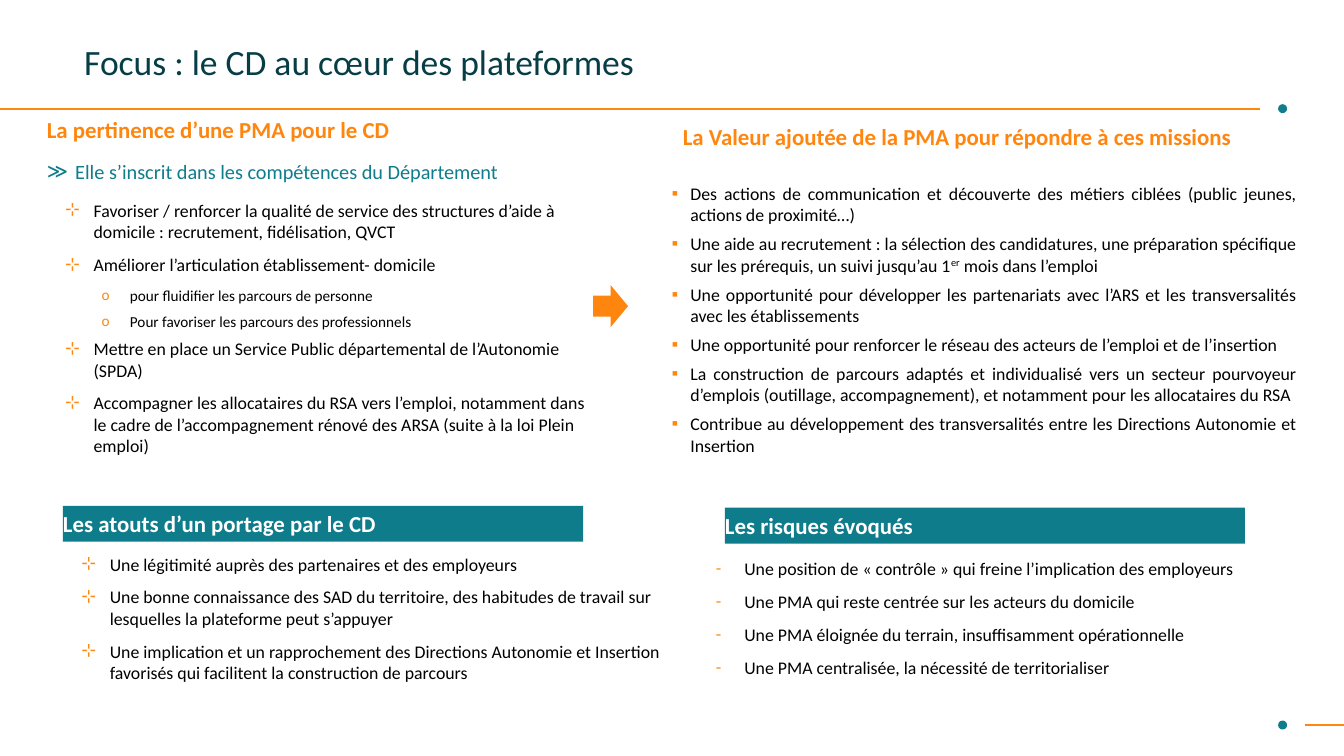
from lxml import etree
from pptx import Presentation
from pptx.dml.color import RGBColor
from pptx.enum import shapes, text
from pptx.oxml import ns
from pptx.util import Cm, Pt

THEME = {
    "font": "Calibri",
    "dark": "073E46", "teal": "0F7D8C", "band": "0E7C8B",
    "orange": "FF870F", "accent": "FF860E", "black": "000000", "white": "FFFFFF",
    "title": 28, "head": 18, "lead": 16, "item": 14, "sub": 12, "rule": 1.25,
}

SPACED = {"line_spacing": 1.14, "space_before": Pt(6), "space_after": Pt(12)}
ITEM = {"level": 1, "line_spacing": 1.0, "space_before": Pt(0), "space_after": Pt(9)}
SUB = {**ITEM, "level": 2, "space_after": Pt(6)}
TIGHT = {**SUB, "level": 0, "alignment": text.PP_ALIGN.JUSTIFY}
LEFT = {"alignment": text.PP_ALIGN.LEFT}

STYLES = {
    "title": {"size": "title", "color": "dark", "para": LEFT},
    "head": {"size": "head", "color": "accent", "bold": True, "para": {**SPACED, **LEFT}},
    "band": {"size": "head", "color": "white", "bold": True, "para": {**SPACED, **LEFT}},
    "lead": {"size": "lead", "color": "teal", "para": SPACED, "bullet": ("≫", "band", 0.79, -0.79)},
    "item": {"size": "item", "color": "black", "para": ITEM, "bullet": ("⊹", "orange", 1.3, -0.79)},
    "sub": {"size": "sub", "color": "black", "para": SUB, "bullet": ("o", "orange", 2.31, -0.79)},
    "value": {"size": "item", "color": "black", "para": TIGHT, "bullet": ("▪", "orange", 0.51, -0.61)},
    "risk": {"size": "item", "color": "black", "para": ITEM, "bullet": ("-", "orange", 1.3, -0.79)},
}

RELEVANCE = [
    ("lead", "Elle s’inscrit dans les compétences du Département"),
    ("item", "Favoriser / renforcer la qualité de service des structures d’aide à domicile : recrutement, fidélisation, QVCT"),
    ("item", "Améliorer l’articulation établissement- domicile"),
    ("sub", "pour fluidifier les parcours de personne"),
    ("sub", "Pour favoriser les parcours des professionnels"),
    ("item", "Mettre en place un Service Public départemental de l’Autonomie (SPDA)"),
    ("item", "Accompagner les allocataires du RSA vers l’emploi, notamment dans le cadre de l’accompagnement rénové des ARSA (suite à la loi Plein emploi)"),
]
VALUES = [("value", t) for t in (
    "Des actions de communication et découverte des métiers ciblées (public jeunes, actions de proximité…)",
    "Une aide au recrutement : la sélection des candidatures, une préparation spécifique sur les prérequis, un suivi jusqu’au 1^er^ mois dans l’emploi",
    "Une opportunité pour développer les partenariats avec l’ARS et les transversalités avec les établissements",
    "Une opportunité pour renforcer le réseau des acteurs de l’emploi et de l’insertion",
    "La construction de parcours adaptés et individualisé vers un secteur pourvoyeur d’emplois (outillage, accompagnement), et notamment pour les allocataires du RSA",
    "Contribue au développement des transversalités entre les Directions Autonomie et Insertion",
)]
ASSETS = [("item", t) for t in (
    "Une légitimité auprès des partenaires et des employeurs",
    "Une bonne connaissance des SAD du territoire, des habitudes de travail sur lesquelles la plateforme peut s’appuyer",
    "Une implication et un rapprochement des Directions Autonomie et Insertion favorisés qui facilitent la construction de parcours",
)]
RISKS = [("risk", t) for t in (
    "Une position de « contrôle » qui freine l’implication des employeurs",
    "Une PMA qui reste centrée sur les acteurs du domicile",
    "Une PMA éloignée du terrain, insuffisamment opérationnelle",
    "Une PMA centralisée, la nécessité de territorialiser",
)]

PLACEHOLDERS = [
    ((2.34, 0.51, 32.69, 1.8), [("title", "Focus : le CD au cœur des plateformes")]),
    ((1.3, 3.1, 14.45, 1), [("head", "La pertinence d’une PMA pour le CD")]),
    ((1.3, 4.34, 15.19, 9.65), RELEVANCE),
    ((18.97, 3.3, 15.42, 1), [("head", "La Valeur ajoutée de la PMA pour répondre à ces missions")]),
    ((1.75, 15.37, 17.68, 4.09), ASSETS),
]
BOXES = [
    ((18.67, 5.08, 17.37, 7.92), VALUES, (0, 0)),
    ((19.13, 15.37, 18.29, 3.61), RISKS, (0.25, 0.13)),
]
BANDS = [
    ((1.75, 14.05, 14.45, 1), "Les atouts d’un portage par le CD"),
    ((20.14, 14.1, 14.45, 1), "Les risques évoqués"),
]
ARROW = (16.48, 7.92, 0.97, 1.17)
RULES = [(0, 35, 3.02), (36.27, 37.34, 20.14)]
DOT_LEFT, DOT = 35.51, 0.25


def rgb(name):
    return RGBColor.from_string(THEME[name])


def put(obj, values):
    for name, value in values.items():
        setattr(obj, name, value)


def cm(box):
    return [Cm(v) for v in box]


def add_bullet(p, char, color, margin, indent):
    pPr = p._p.get_or_add_pPr()
    pPr.set("marL", str(Cm(margin)))
    pPr.set("indent", str(Cm(indent)))
    clr = etree.SubElement(pPr, ns.qn("a:buClr"))
    etree.SubElement(clr, ns.qn("a:srgbClr"), val=THEME[color])
    etree.SubElement(pPr, ns.qn("a:buFont"), typeface=THEME["font"])
    etree.SubElement(pPr, ns.qn("a:buChar"), char=char)


def write(sp, lines, inset=(0, 0), anchor=text.MSO_ANCHOR.TOP):
    tf = sp.text_frame
    x, y = cm(inset)
    put(tf, {"word_wrap": True, "auto_size": text.MSO_AUTO_SIZE.NONE, "vertical_anchor": anchor,
             "margin_left": x, "margin_right": x, "margin_top": y, "margin_bottom": y})
    for i, (kind, line) in enumerate(lines):
        style = STYLES[kind]
        p = tf.add_paragraph() if i else tf.paragraphs[0]
        put(p, style["para"])
        if "bullet" in style:
            add_bullet(p, *style["bullet"])
        for part, words in enumerate(line.split("^")):
            r = p.add_run()
            r.text = words
            put(r.font, {"name": THEME["font"], "size": Pt(THEME[style["size"]]),
                         "bold": style.get("bold", False)})
            r.font.color.rgb = rgb(style["color"])
            if part % 2:
                r._r.get_or_add_rPr().set("baseline", "30000")


def add_solid(s, kind, box, color):
    sp = s.shapes.add_shape(kind, *cm(box))
    sp.shadow.inherit = False
    sp.fill.solid()
    sp.fill.fore_color.rgb = rgb(color)
    sp.line.fill.background()
    return sp


def add_rule(s, x1, x2, y):
    line = s.shapes.add_connector(shapes.MSO_CONNECTOR.STRAIGHT, *cm((x1, y, x2, y)))
    line.line.color.rgb = rgb("orange")
    line.line.width = Pt(THEME["rule"])
    etree.SubElement(line._element.spPr, ns.qn("a:effectLst"))


def main():
    prs = Presentation()
    put(prs, {"slide_width": Cm(37.34), "slide_height": Cm(21)})
    s = prs.slides.add_slide(prs.slide_layouts.get_by_name("Comparison"))

    for x1, x2, y in RULES:
        add_rule(s, x1, x2, y)
        add_solid(s, shapes.MSO_SHAPE.OVAL, (DOT_LEFT, y - DOT / 2, DOT, DOT), "teal")

    for sp, (box, lines) in zip(list(s.placeholders), PLACEHOLDERS):
        put(sp, dict(zip(("left", "top", "width", "height"), cm(box))))
        is_title = lines[0][0] == "title"
        write(sp, lines, anchor=text.MSO_ANCHOR.BOTTOM if is_title else text.MSO_ANCHOR.TOP)

    add_solid(s, shapes.MSO_SHAPE.RIGHT_ARROW, ARROW, "accent")
    for box, lines, inset in BOXES:
        write(s.shapes.add_textbox(*cm(box)), lines, inset)
    for box, label in BANDS:
        write(add_solid(s, shapes.MSO_SHAPE.RECTANGLE, box, "band"), [("band", label)])

    prs.save("out.pptx")


if __name__ == "__main__":
    main()
